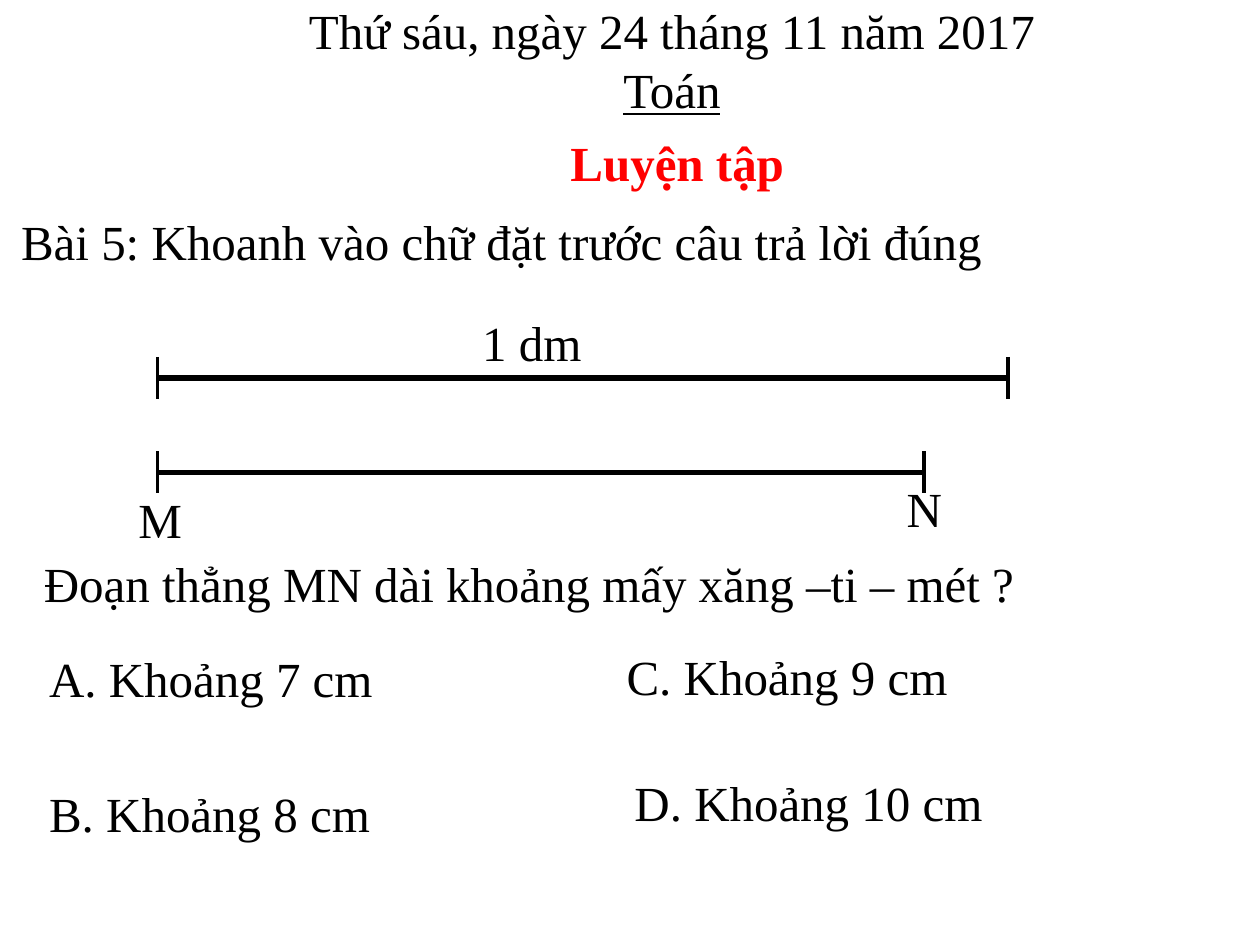
from pptx import Presentation
from pptx.dml.color import RGBColor
from pptx.enum.shapes import MSO_CONNECTOR
from pptx.enum.text import MSO_ANCHOR, MSO_AUTO_SIZE, PP_ALIGN
from pptx.oxml.ns import qn
from pptx.util import Pt
from lxml import etree

STRAIGHT = MSO_CONNECTOR.STRAIGHT
MIDDLE = MSO_ANCHOR.MIDDLE
FIT_SHAPE = MSO_AUTO_SIZE.SHAPE_TO_FIT_TEXT
LEFT, CENTER = PP_ALIGN.LEFT, PP_ALIGN.CENTER
BLACK, RED = "000000", "FF0000"


def color(value):
    """Turn a hex string into a colour."""
    return RGBColor.from_string(value)


class Lesson:
    """Holds the text style and the slide being filled."""

    font, size, line_height = "Times New Roman", 28, 41
    tick_height = 24

    def __init__(self, page):
        self.page = page

    def _box(self, left, top, width, height, align, ink=BLACK, bold=False):
        box = self.page.shapes.add_textbox(Pt(left), Pt(top), Pt(width), Pt(height))
        paragraph = box.text_frame.paragraphs[0]
        paragraph.alignment = align
        paragraph.font.name = self.font
        paragraph.font.size = Pt(self.size)
        paragraph.font.bold = bold
        paragraph.font.color.rgb = color(ink)
        return box.text_frame, paragraph

    def heading(self, date, subject, left, top, width, height):
        frame, paragraph = self._box(left, top, width, height, CENTER)
        frame.word_wrap = True
        frame.vertical_anchor = MIDDLE
        paragraph.add_run().text = date
        paragraph.add_line_break()
        span = paragraph.add_run()
        span.text = subject
        span.font.underline = True
        for span in paragraph.runs:
            span.font.name = self.font
            span.font.size = Pt(self.size)

    def label(self, text, left, top, width, height=line_height, align=LEFT, **style):
        frame, paragraph = self._box(left, top, width, height, align, **style)
        frame.word_wrap = False
        frame.auto_size = FIT_SHAPE
        paragraph.add_run().text = text

    def line(self, x1, y1, x2, y2, weight):
        line = self.page.shapes.add_connector(STRAIGHT, Pt(x1), Pt(y1), Pt(x2), Pt(y2))
        line.line.color.rgb = color(BLACK)
        line.line.width = Pt(weight)
        etree.SubElement(line._element.spPr, qn("a:effectLst"))

    def segment(self, start, end, y):
        self.line(start, y, end, y, 3)
        half = self.tick_height / 2
        for x in (start, end):
            self.line(x, y - half, x, y + half, 2.25)


def main():
    deck = Presentation()
    deck.slide_width, deck.slide_height = Pt(720), Pt(540)
    lesson = Lesson(deck.slides.add_slide(deck.slide_layouts[6]))

    lesson.heading("Thứ sáu, ngày 24 tháng 11 năm 2017", "Toán", 78, -24, 612, 116)
    lesson.label("Luyện tập", 318, 72, 138, align=CENTER, ink=RED, bold=True)
    lesson.label("Bài 5: Khoanh vào chữ đặt trước câu trả lời đúng", 5, 117.5, 569)

    for end, y in ((576, 216), (528, 270)):
        lesson.segment(90, end, y)
    for text, left, top, width in (
        ("1 dm", 268.5, 175, 72),
        ("M", 72, 276, 39.5),
        ("N", 511, 270, 35.5),
    ):
        lesson.label(text, left, top, width)

    lesson.label("Đoạn thẳng MN dài khoảng mấy xăng –ti – mét ?", 18, 312.5, 574.5, 75)
    for text, left, top, width in (
        ("A. Khoảng 7 cm", 21, 367, 201.5),
        ("B. Khoảng 8 cm", 21, 444, 199.5),
        ("C. Khoảng 9 cm", 351, 366, 199.5),
        ("D. Khoảng 10 cm", 355.5, 438, 215.5),
    ):
        lesson.label(text, left, top, width)

    deck.save("out.pptx")


if __name__ == "__main__":
    main()
